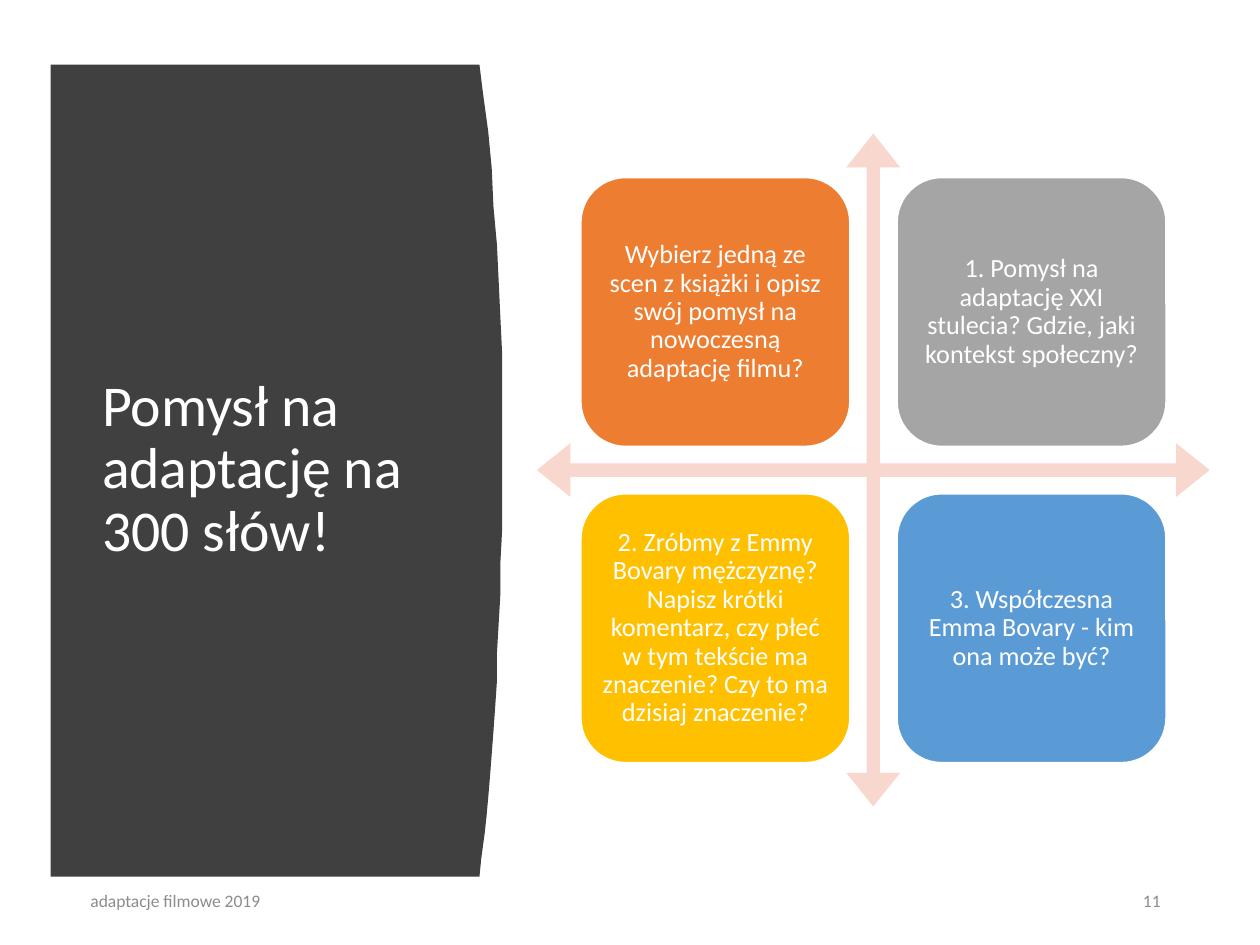
from pptx import Presentation
from pptx.dml.color import RGBColor
from pptx.enum import shapes, text
from pptx.util import Pt

TITLE = "Pomysł na adaptację na 300 słów!"
FOOTER = "adaptacje filmowe 2019"
PAGE_NUMBER = "11"
CARDS = [
    ("Wybierz jedną ze scen z książki i opisz swój pomysł na nowoczesną adaptację filmu?", "ED7D31"),
    ("1. Pomysł na adaptację XXI stulecia? Gdzie, jaki kontekst społeczny?", "A5A5A5"),
    ("2. Zróbmy z Emmy Bovary mężczyznę? Napisz krótki komentarz, czy płeć w tym tekście "
     "ma znaczenie? Czy to ma dzisiaj znaczenie?", "FFC000"),
    ("3. Współczesna Emma Bovary - kim ona może być?", "5B9BD5"),
]
PANEL_LEFT, PANEL_TOP, PANEL_BOTTOM = 28.8, 37.4, 501.1
PANEL_EDGE = [
    (274.3, 37.4), (276.5, 53.3), (278.7, 74.9), (280.8, 96.5), (282.2, 118.1),
    (283.7, 139.7), (285.1, 161.3), (285.9, 182.2), (286.6, 203), (287, 224),
    (287.3, 244), (287.3, 264.2), (287.1, 283.7), (286.7, 302.4), (286.3, 321),
    (285.7, 339.1), (285.1, 356.4), (284.3, 373), (283.5, 388.8), (282.6, 403.9),
    (281.6, 418.3), (280.6, 431.3), (279.6, 444.2), (278.6, 455.8), (277.8, 466.6),
    (276.9, 475.9), (275.4, 491), (274.3, 501.1),
]
CROSS_LEFT, CROSS_TOP, CROSS_SIZE = 306.8, 76.4, 384.5
CARD_LEFT, CARD_TOP, CARD_SIZE, CARD_STEP = 331.9, 101.4, 153.8, 180.7


def color(value):
    return RGBColor.from_string(value)


def place(shape, left, top, width, height):
    shape.left, shape.top, shape.width, shape.height = map(Pt, (left, top, width, height))


def paint(shape, fill, line=None):
    shape.shadow.inherit = False
    shape.fill.solid()
    shape.fill.fore_color.rgb = color(fill)
    if line:
        shape.line.color.rgb = color(line)
        shape.line.width = Pt(1)
    else:
        shape.line.fill.background()


def write(shape, words, size, ink, align="LEFT", spacing=1.0, inset=None):
    frame = shape.text_frame
    frame.text = words
    frame_format = {
        "word_wrap": True,
        "auto_size": text.MSO_AUTO_SIZE.NONE,
        "vertical_anchor": text.MSO_ANCHOR.MIDDLE,
    }
    if inset is not None:
        for side in ("left", "top", "right", "bottom"):
            frame_format["margin_" + side] = Pt(inset)
    para = frame.paragraphs[0]
    para_format = {"alignment": text.PP_ALIGN[align], "line_spacing": spacing}
    font = para.runs[0].font
    font_format = {"name": "Calibri", "size": Pt(size)}
    for target, values in ((frame, frame_format), (para, para_format), (font, font_format)):
        for name, value in values.items():
            setattr(target, name, value)
    font.color.rgb = color(ink)


def add_panel(page):
    """Draw the curved panel and send it behind the title."""
    outline = page.shapes.build_freeform(PANEL_LEFT, PANEL_TOP, scale=Pt(1))
    outline.add_line_segments(PANEL_EDGE + [(PANEL_LEFT, PANEL_BOTTOM)], close=True)
    panel = outline.convert_to_shape()
    paint(panel, "404040")
    page.shapes._spTree.insert(2, panel._element)


def add_cross(page):
    cross = page.shapes.add_shape(shapes.MSO_SHAPE.QUAD_ARROW, 0, 0, 0, 0)
    place(cross, CROSS_LEFT, CROSS_TOP, CROSS_SIZE, CROSS_SIZE)
    for index, value in enumerate((0.02, 0.04, 0.05)):
        cross.adjustments[index] = value
    paint(cross, "F8D7CE")


def add_cards(page):
    for index, (words, fill) in enumerate(CARDS):
        row, column = divmod(index, 2)
        card = page.shapes.add_shape(shapes.MSO_SHAPE.ROUNDED_RECTANGLE, 0, 0, 0, 0)
        place(card, CARD_LEFT + column * CARD_STEP, CARD_TOP + row * CARD_STEP,
              CARD_SIZE, CARD_SIZE)
        paint(card, fill, "FFFFFF")
        write(card, words, 15, "FFFFFF", "CENTER", 0.9, 4.5)


def add_footers(page):
    for words, left, width, align in ((FOOTER, 44.6, 243.4, "LEFT"),
                                      (PAGE_NUMBER, 633.6, 36.7, "RIGHT")):
        box = page.shapes.add_textbox(0, 0, 0, 0)
        place(box, left, 500.4, width, 28.8)
        write(box, words, 10, "8C8C8C", align)
        box.text_frame.paragraphs[0].space_after = Pt(6)


def main():
    deck = Presentation()
    deck.slide_width, deck.slide_height = Pt(720), Pt(540)
    page = deck.slides.add_slide(deck.slide_layouts[5])
    title = page.shapes.title
    place(title, 51.1, 79.9, 201.6, 377.3)
    write(title, TITLE, 33, "FFFFFF", spacing=0.9)
    add_panel(page)
    add_footers(page)
    add_cross(page)
    add_cards(page)
    deck.save("out.pptx")


if __name__ == "__main__":
    main()
